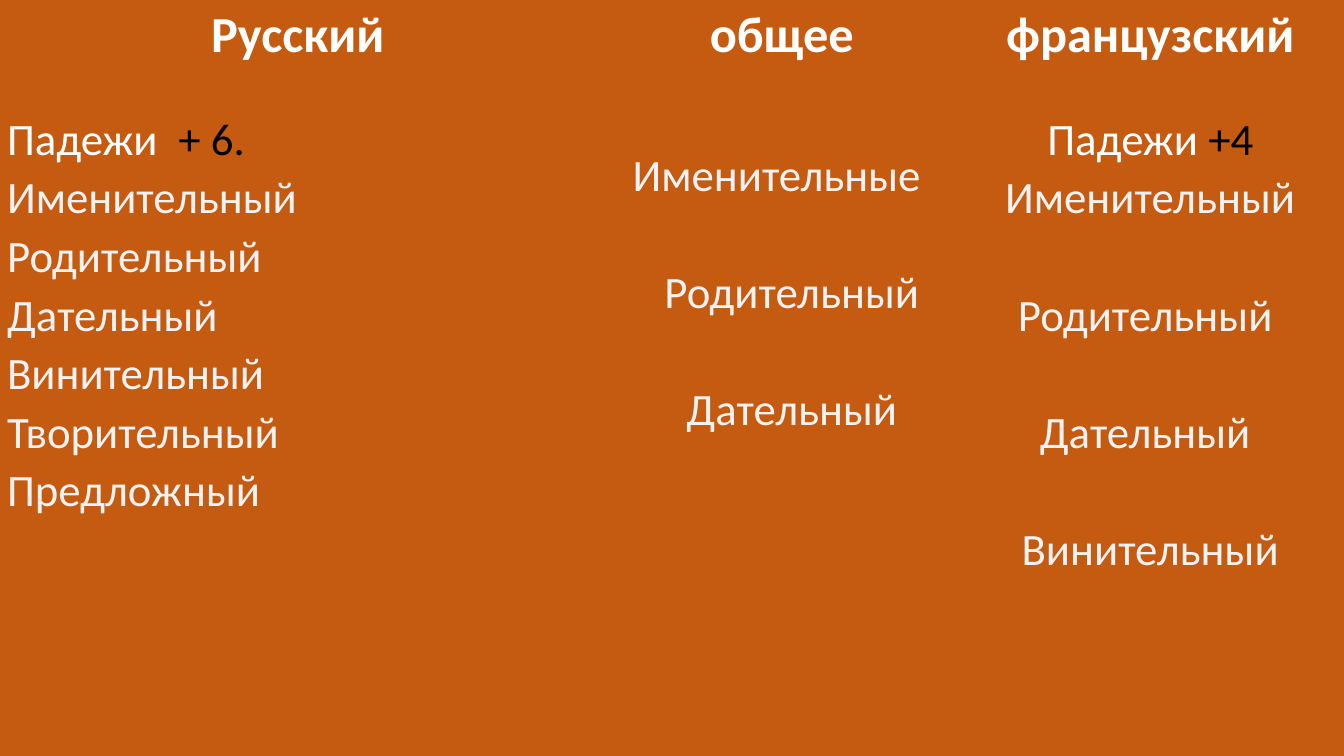
from dataclasses import dataclass
from pptx import Presentation
from pptx.dml.color import RGBColor
from pptx.enum import text as t
from pptx.oxml import parse_xml
from pptx.oxml.ns import nsdecls, qn
from pptx.util import Inches, Pt


@dataclass(frozen=True)
class Theme:
    font: str = "Calibri"
    fill: str = "C55A11"
    white: str = "FFFFFF"
    pale: str = "F2F2F2"
    black: str = "000000"
    heading: int = 36
    body: int = 32
    line_spacing: float = 1.07
    skipped_line: float = 41.8
    no_grid_style: str = "{2D5ABB26-0587-4C30-8999-92F81FD0307C}"


THEME = Theme()
CENTER, LEFT = t.PP_ALIGN.CENTER, t.PP_ALIGN.LEFT
COLUMN_WIDTHS = (6.02, 3.47, 3.84)
ROW_HEIGHTS = (1.08, 6.42)
HEADINGS = ("Русский ", "общее", "французский")

# Each line: its spans (text, colour), then optional paragraph settings
SKIP = {"gap": THEME.skipped_line}
RUSSIAN = [([("Падежи\t", THEME.white), ("+ 6.", THEME.black)], {"tab": 1.7})] + [
    ([(name, THEME.pale)], {}) for name in
    ("Именительный", "Родительный", "Дательный", "Винительный", "Творительный", "Предложный")]
COMMON = [([("Именительные ", THEME.pale)], {})] + [
    ([(name, THEME.pale)], {**SKIP, "indent": 0.2}) for name in ("Родительный", "Дательный")]
FRENCH = [([("Падежи ", THEME.white), ("+4", THEME.black)], {}),
          ([("Именительный", THEME.pale)], {})] + [
    ([(name, THEME.pale)], SKIP) for name in ("Родительный ", "Дательный ", "Винительный")]


def write_line(para, spans, size, bold, align, gap=0, indent=0, tab=0):
    properties = para._p.get_or_add_pPr()
    if indent:
        properties.set("marL", str(Inches(indent)))
    if tab:
        properties.append(parse_xml(
            f'<a:tabLst {nsdecls("a")}><a:tab pos="{Inches(tab)}" algn="l"/></a:tabLst>'))
    layout = {"alignment": align, "line_spacing": THEME.line_spacing, "space_before": Pt(gap)}
    for name, value in layout.items():
        setattr(para, name, value)
    for words, colour in spans:
        span = para.add_run()
        span.text = words
        for name, value in {"name": THEME.font, "size": Pt(size), "bold": bold}.items():
            setattr(span.font, name, value)
        span.font.color.rgb = RGBColor.from_string(colour)


def fill_cell(cell, lines, size, bold=False, align=CENTER, top=0):
    margins = {"margin_left": 0.07, "margin_right": 0.07, "margin_top": top, "margin_bottom": 0}
    for name, value in margins.items():
        setattr(cell, name, Inches(value))
    cell.fill.solid()
    cell.fill.fore_color.rgb = RGBColor.from_string(THEME.fill)
    frame = cell.text_frame
    for index, (spans, settings) in enumerate(lines):
        para = frame.add_paragraph() if index else frame.paragraphs[0]
        write_line(para, spans, size, bold, align, **settings)


def add_case_table(page, left, top, width, height):
    table = page.shapes.add_table(
        len(ROW_HEIGHTS), len(COLUMN_WIDTHS),
        Inches(left), Inches(top), Inches(width), Inches(height)).table
    table.first_row = table.horz_banding = False
    table._tbl.tblPr.find(qn("a:tableStyleId")).text = THEME.no_grid_style
    for column, share in zip(table.columns, COLUMN_WIDTHS):
        column.width = Inches(width * share / sum(COLUMN_WIDTHS))
    for row, share in zip(table.rows, ROW_HEIGHTS):
        row.height = Inches(height * share / sum(ROW_HEIGHTS))

    # Heading row
    for index, heading in enumerate(HEADINGS):
        fill_cell(table.cell(0, index), [([(heading, THEME.white)], {})], THEME.heading, bold=True)

    # Lists of cases
    fill_cell(table.cell(1, 0), RUSSIAN, THEME.body, align=LEFT)
    fill_cell(table.cell(1, 1), COMMON, THEME.body, top=0.36)
    fill_cell(table.cell(1, 2), FRENCH, THEME.body)


def main():
    deck = Presentation()
    deck.slide_width, deck.slide_height = Inches(13.33), Inches(7.5)
    page = deck.slides.add_slide(deck.slide_layouts[6])
    add_case_table(page, 0, 0, 13.33, 7.5)
    deck.save("out.pptx")


if __name__ == "__main__":
    main()
